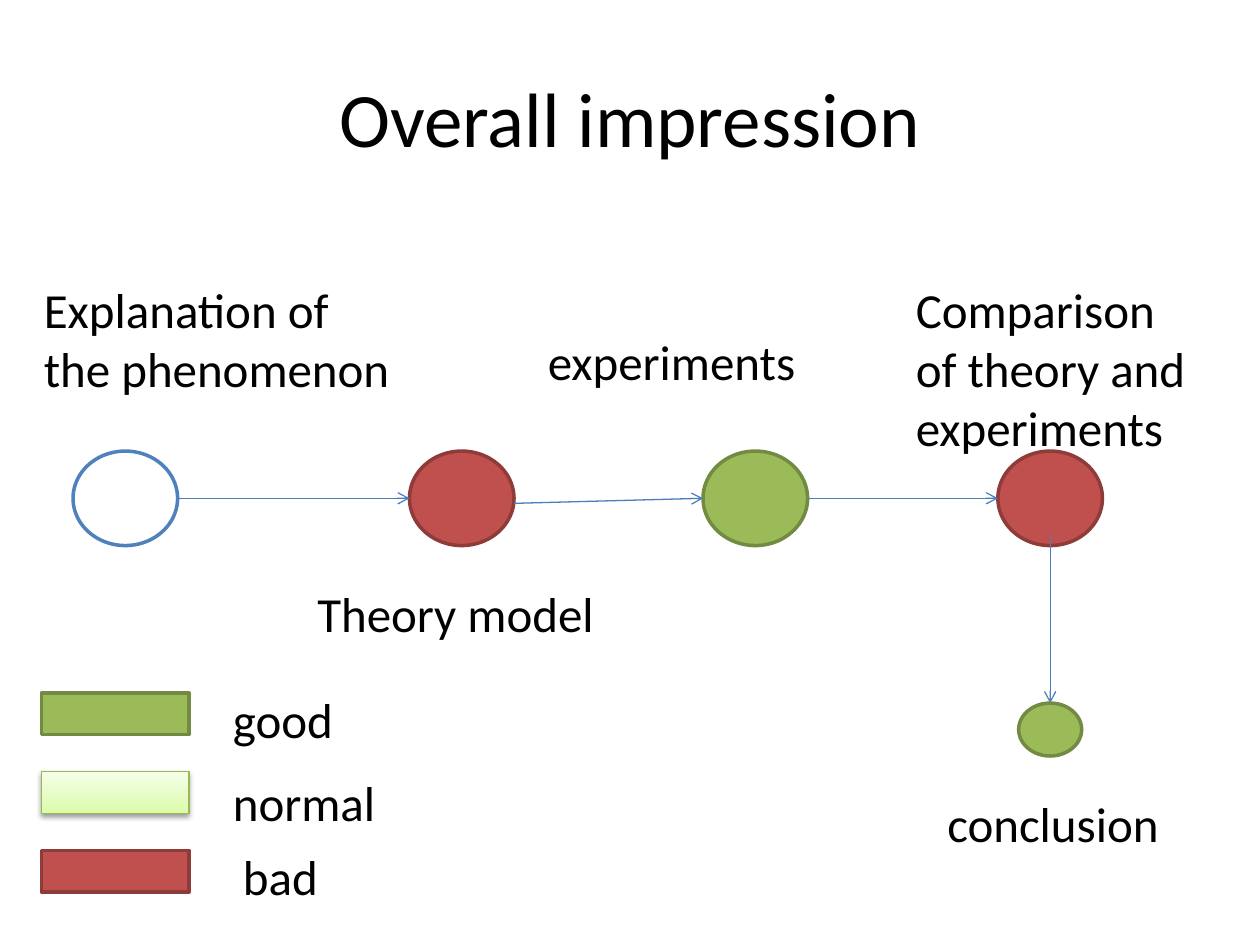
from pptx import Presentation
from pptx.dml.color import RGBColor
from pptx.enum import shapes, text
from pptx.oxml import parse_xml
from pptx.oxml.ns import nsdecls, qn
from pptx.util import Inches, Pt

BLACK = RGBColor(0x00, 0x00, 0x00)
WHITE = RGBColor(0xFF, 0xFF, 0xFF)
BLUE = RGBColor(0x4F, 0x81, 0xBD)
ARROW_BLUE = RGBColor(0x4B, 0x7E, 0xBC)
GREEN = RGBColor(0x9B, 0xBB, 0x59)
DARK_GREEN = RGBColor(0x73, 0x8A, 0x42)
PALE_EDGE = RGBColor(0x98, 0xB9, 0x55)
RED = RGBColor(0xC0, 0x50, 0x4D)
DARK_RED = RGBColor(0x8E, 0x3B, 0x39)
PALE_STOPS = ((0, RGBColor(0xDA, 0xFD, 0xA7)), (35, RGBColor(0xE4, 0xFC, 0xC2)),
              (100, RGBColor(0xF5, 0xFF, 0xE7)))
UNRATED, GOOD, BAD = (WHITE, BLUE), (GREEN, DARK_GREEN), (RED, DARK_RED)


def add_text(slide, words, left, top, width, height, size=28,
             align=text.PP_ALIGN.LEFT, anchor=text.MSO_ANCHOR.TOP):
    """Place one wrapped paragraph in a text box."""
    frame = slide.shapes.add_textbox(
        Inches(left), Inches(top), Inches(width), Inches(height)).text_frame
    frame.word_wrap = True
    frame.vertical_anchor = anchor
    paragraph = frame.paragraphs[0]
    paragraph.alignment = align
    run = paragraph.add_run()
    run.text = words
    run.font.name = "Calibri"
    run.font.size = Pt(size)
    run.font.color.rgb = BLACK


def add_mark(slide, kind, left, top, width, height, rating):
    """Draw a shape in the fill and outline of its rating."""
    mark = slide.shapes.add_shape(
        kind, Inches(left), Inches(top), Inches(width), Inches(height))
    fill, edge = rating
    mark.shadow.inherit = False
    mark.fill.solid()
    mark.fill.fore_color.rgb = fill
    mark.line.color.rgb = edge
    mark.line.width = Pt(2)
    return mark


def add_arrow(slide, x1, y1, x2, y2):
    """Draw a thin line with an open arrowhead at its end."""
    arrow = slide.shapes.add_connector(
        shapes.MSO_CONNECTOR.STRAIGHT, Inches(x1), Inches(y1), Inches(x2), Inches(y2))
    arrow.line.color.rgb = ARROW_BLUE
    arrow.line.width = Pt(0.75)
    arrow.line._get_or_add_ln().append(
        parse_xml(f'<a:tailEnd {nsdecls("a")} type="arrow"/>'))
    arrow._element.spPr.append(parse_xml(f'<a:effectLst {nsdecls("a")}/>'))


def make_pale(swatch):
    """Give a swatch the pale gradient, thin edge and soft shadow."""
    swatch.fill.gradient()
    swatch.fill.gradient_angle = 90
    properties = swatch._element.spPr
    stops = "".join(f'<a:gs pos="{pos * 1000}"><a:srgbClr val="{color}"/></a:gs>'
                    for pos, color in PALE_STOPS)
    gradient = properties.find(qn("a:gradFill"))
    gradient.replace(gradient.find(qn("a:gsLst")),
                     parse_xml(f'<a:gsLst {nsdecls("a")}>{stops}</a:gsLst>'))
    swatch.line.width = Pt(0.75)
    properties.find(qn("a:effectLst")).append(parse_xml(
        f'<a:outerShdw {nsdecls("a")} blurRad="{Pt(3.1)}" dist="{Pt(1.6)}" '
        'dir="5400000" rotWithShape="0"><a:srgbClr val="000000">'
        '<a:alpha val="38000"/></a:srgbClr></a:outerShdw>'))


def add_title(slide, left, top, width, height):
    """Centre the heading in its box."""
    add_text(slide, "Overall impression", left, top, width, height, size=44,
             align=text.PP_ALIGN.CENTER, anchor=text.MSO_ANCHOR.MIDDLE)


def add_flow(slide, left, top, width, height):
    """Draw the rated stages, their arrows and captions."""
    oval = shapes.MSO_SHAPE.OVAL
    stage_w, stage_h, end_w, end_h = 0.83, 0.75, 0.5, 0.42
    stage_top = top + 1.41
    middle = stage_top + stage_h / 2
    stages = ((0.33, UNRATED), (3, BAD), (5.33, GOOD), (7.67, BAD))
    for offset, rating in stages:
        add_mark(slide, oval, left + offset, stage_top, stage_w, stage_h, rating)
    drops = (0, 0.04, 0)
    for (start, _), (end, _), drop in zip(stages, stages[1:], drops):
        add_arrow(slide, left + start + stage_w, middle + drop, left + end, middle)

    end_center = left + stages[-1][0] + stage_w / 2
    end_top = top + height - 1.24
    add_arrow(slide, end_center, stage_top + 0.67, end_center, end_top)
    add_mark(slide, oval, end_center - end_w / 2, end_top, end_w, end_h, GOOD)

    captions = (
        ("Explanation of the phenomenon", 0, 0, 3, 1.04),
        ("Theory model", 2.17, 2.41, 2.83, 0.57),
        ("experiments", 4, 0.41, 2.25, 0.57),
        ("Comparison of theory and experiments", width - 2.5, 0, 2.5, 1.51),
        ("conclusion", width - 2.25, height - 0.57, 2, 0.57),
    )
    for words, x, y, w, h in captions:
        add_text(slide, words, left + x, top + y, w, h)


def add_legend(slide, left, top, width, height):
    """List the three ratings with their swatches."""
    swatch_w, swatch_h, label_h = 1.17, 0.33, 0.57
    pitch = (height - label_h) / 2
    entries = (("good", GOOD, 1.42, 0), ("normal", (WHITE, PALE_EDGE), 1.42, 0.66),
               ("bad", BAD, 1.5, 1.25))
    for row, (words, rating, x, y) in enumerate(entries):
        swatch = add_mark(slide, shapes.MSO_SHAPE.RECTANGLE, left,
                          top + 0.08 + row * pitch, swatch_w, swatch_h, rating)
        if words == "normal":
            make_pale(swatch)
        add_text(slide, words, left + x, top + y, width - x, label_h)


def main():
    """Build and save the slide."""
    deck = Presentation()
    deck.slide_width, deck.slide_height = Inches(10), Inches(7.5)
    slide = deck.slides.add_slide(deck.slide_layouts[6])
    add_title(slide, 0.5, 0.3, 9, 1.25)
    add_flow(slide, 0.25, 2.17, 9.42, 4.65)
    add_legend(slide, 0.33, 5.42, 3.08, 1.82)
    deck.save("out.pptx")


if __name__ == "__main__":
    main()
